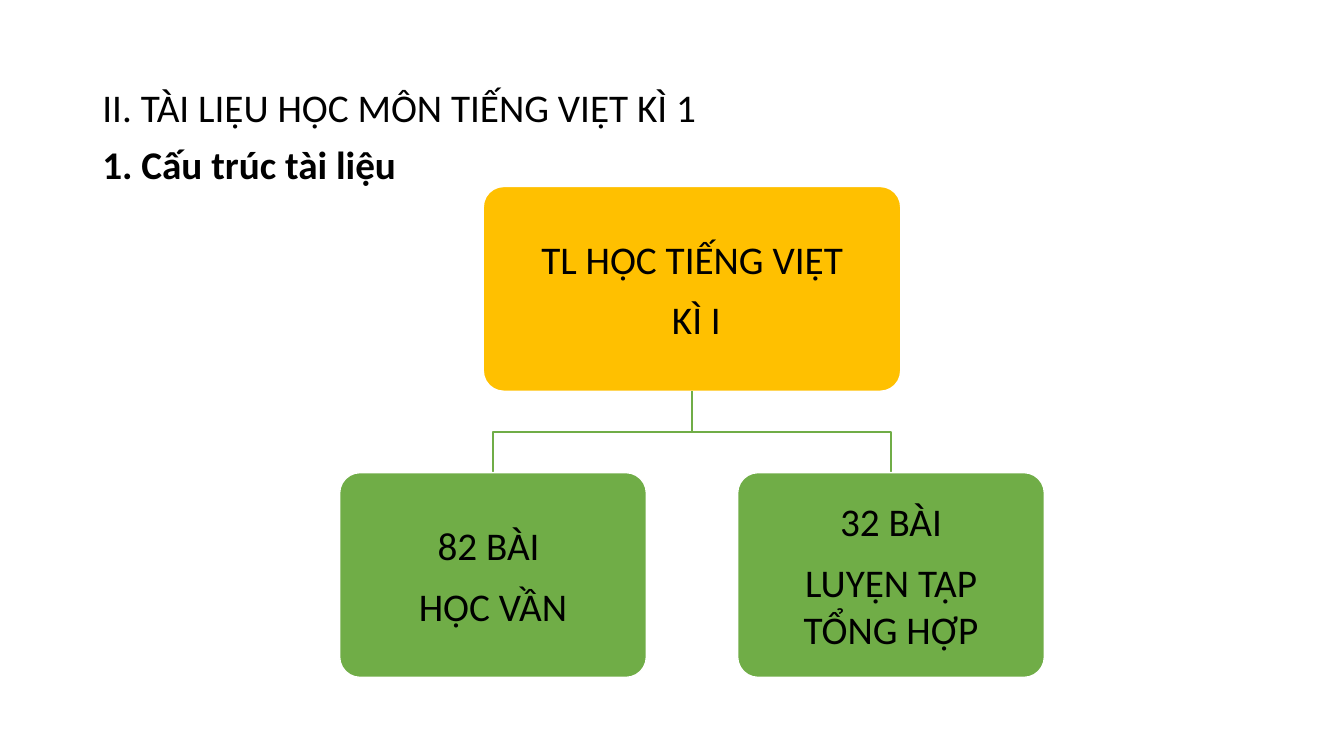
from pptx import Presentation
from pptx.dml.color import RGBColor
from pptx.enum.shapes import MSO_SHAPE as Preset
from pptx.enum.text import MSO_ANCHOR as Anchor, PP_ALIGN as Align
from pptx.util import Cm, Pt

COLOURS = {"text": "000000", "root": "FFC000", "branch": "70AD47", "edge": "FFFFFF"}
HEADING = ["II. TÀI LIỆU HỌC MÔN TIẾNG VIỆT KÌ 1", "1. Cấu trúc tài liệu"]
ROOT = ["TL HỌC TIẾNG VIỆT", " KÌ I"]
BRANCHES = [["82 BÀI ", "HỌC VẦN"], ["32 BÀI", "LUYỆN TẬP TỔNG HỢP"]]
NODE_HEIGHT, ROOT_WIDTH, BRANCH_WIDTH = 5.16, 10.52, 7.73


def colour(name):
    """Return the named colour of the slide."""
    return RGBColor.from_string(COLOURS[name])


def write_lines(frame, lines, align):
    """Fill a text frame with one paragraph per line and return the paragraphs."""
    frame.word_wrap = True
    frame.text = "\n".join(lines)
    for para in frame.paragraphs:
        para.alignment = align
        for span in para.runs:
            span.font.name = "Calibri"
            span.font.size = Pt(28)
            span.font.color.rgb = colour("text")
    return frame.paragraphs


def add_heading(page, left, top, width, height):
    """Place the section title and its bold subtitle."""
    box = page.shapes.add_textbox(Cm(left), Cm(top), Cm(width), Cm(height))
    paras = write_lines(box.text_frame, HEADING, Align.LEFT)
    for para in paras:
        para.line_spacing = 0.9
        para.space_before = Pt(10)
    paras[-1].runs[0].font.bold = True


def add_node(page, lines, fill, left, top, width):
    """Place one rounded box of the tree with centred text."""
    node = page.shapes.add_shape(
        Preset.ROUNDED_RECTANGLE, Cm(left), Cm(top), Cm(width), Cm(NODE_HEIGHT))
    node.adjustments[0] = 0.1
    node.shadow.inherit = False
    node.fill.solid()
    node.fill.fore_color.rgb = colour(fill)
    node.line.color.rgb = colour("edge")
    node.line.width = Pt(1)
    frame = node.text_frame
    frame.vertical_anchor = Anchor.MIDDLE
    frame.margin_left = frame.margin_right = Cm(0.3)
    frame.margin_top = frame.margin_bottom = Cm(0.3)
    for para in write_lines(frame, lines, Align.CENTER):
        para.space_after = Pt(9.8)


def add_link(page, start_x, start_y, end_x, end_y):
    """Draw the stepped line from the root down to a branch."""
    middle = (start_y + end_y) / 2
    builder = page.shapes.build_freeform(Cm(start_x), Cm(start_y))
    corners = [(start_x, middle), (end_x, middle), (end_x, end_y)]
    builder.add_line_segments([(Cm(x), Cm(y)) for x, y in corners], close=False)
    link = builder.convert_to_shape()
    link.shadow.inherit = False
    link.fill.background()
    link.line.color.rgb = colour("branch")
    link.line.width = Pt(1)


def add_tree(page, left, top, width, height):
    """Place the root above its branches and link them."""
    centre = left + width / 2
    branch_top = top + height - NODE_HEIGHT
    step = (width - BRANCH_WIDTH) / (len(BRANCHES) - 1)
    add_node(page, ROOT, "root", centre - ROOT_WIDTH / 2, top, ROOT_WIDTH)
    for index, lines in enumerate(BRANCHES):
        branch_left = left + index * step
        add_link(page, centre, top + NODE_HEIGHT,
                 branch_left + BRANCH_WIDTH / 2, branch_top)
        add_node(page, lines, "branch", branch_left, branch_top, BRANCH_WIDTH)


def main():
    """Build the slide and save the deck."""
    deck = Presentation()
    deck.slide_width, deck.slide_height = Cm(33.87), Cm(19.05)
    page = deck.slides.add_slide(deck.slide_layouts[6])
    add_heading(page, 2.33, 2.12, 29.21, 15.04)
    add_tree(page, 8.56, 4.7, 17.76, 12.37)
    deck.save("out.pptx")


if __name__ == "__main__":
    main()
